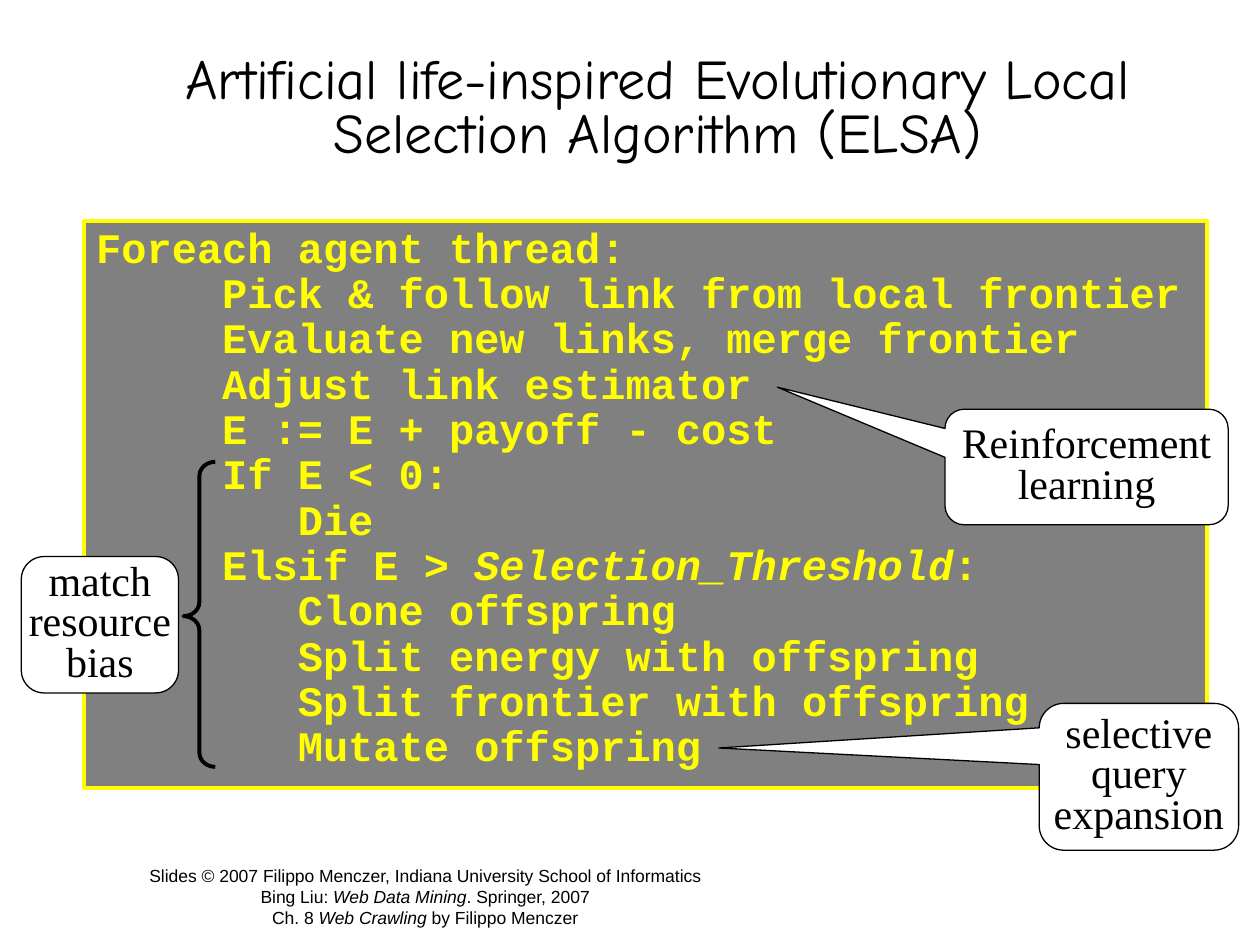
from pptx import Presentation
from pptx import util as u
from pptx.dml.color import RGBColor
from pptx.enum import shapes, text

THEME = {
    "ink": "000000", "paper": "FFFFFF", "panel": "808080", "code": "FFFF00",
    "title": ("Comic Neue", 32), "mono": ("Courier New", 24),
    "note": ("Times New Roman", 24), "foot": ("Arial", 10),
    "thin": 0.75, "thick": 2.25,
}
TITLE = "Artificial life-inspired Evolutionary Local Selection Algorithm (ELSA)"
FOOT = [
    "Slides © 2007 Filippo Menczer, Indiana University School of Informatics",
    "Bing Liu: |Web Data Mining|. Springer, 2007",
    "Ch. 8 |Web Crawling| by Filippo Menczer",
]
HEAD = "Foreach agent thread:"
STEPS = [
    "Pick & follow link from local frontier",
    "Evaluate new links, merge frontier",
    "Adjust link estimator",
    "E := E + payoff - cost",
    "If E < 0:",
    "   Die",
    "Elsif E > |Selection_Threshold|:",
    "   Clone offspring",
    "   Split energy with offspring",
    "   Split frontier with offspring",
    "   Mutate offspring",
]
KIND = shapes.MSO_SHAPE
CALL = KIND.ROUNDED_RECTANGULAR_CALLOUT
NOTES = [
    (CALL, (20.95, 14.18, 4.02, 2.96), (-2.107, -0.196, 0.167),
     ["selective", "query", "expansion"]),
    (KIND.ROUNDED_RECTANGLE, (0.43, 11.22, 3.17, 2.75), (0.167,),
     ["match", "resource", "bias"]),
    (CALL, (19.05, 8.25, 5.71, 2.33), (-1.092, -0.691, 0.167),
     ["Reinforcement", "learning"]),
]


def tint(name):
    return RGBColor.from_string(THEME[name])


def span(box):
    return [u.Cm(n) for n in box]


def write(frame, lines, face, color="ink", gap=1.0, align=text.PP_ALIGN.CENTER,
          anchor=text.MSO_ANCHOR.MIDDLE, wrap=True, bold=False):
    frame.word_wrap = wrap
    frame.auto_size = text.MSO_AUTO_SIZE.NONE
    frame.vertical_anchor = anchor
    name, size = THEME[face]
    for row, line in enumerate(lines):
        para = frame.add_paragraph() if row else frame.paragraphs[0]
        para.alignment, para.line_spacing = align, gap
        for part, words in enumerate(line.split("|")):
            run = para.add_run()
            run.text = words
            font = run.font
            font.name, font.size = name, u.Pt(size)
            font.bold, font.italic = bold, part % 2 == 1
            font.color.rgb = tint(color)


def draw(slide, kind, box, line, width, fill=None, bends=()):
    shape = slide.shapes.add_shape(kind, *span(box))
    shape.shadow.inherit = False
    if fill:
        shape.fill.solid()
        shape.fill.fore_color.rgb = tint(fill)
    else:
        shape.fill.background()
    shape.line.color.rgb = tint(line)
    shape.line.width = u.Pt(THEME[width])
    for spot, bend in enumerate(bends):
        shape.adjustments[spot] = bend
    return shape


def main():
    deck = Presentation()
    deck.slide_width, deck.slide_height = u.Cm(25.4), u.Cm(19.05)
    slide = deck.slides.add_slide(deck.slide_layouts[5])
    slide.background.fill.solid()
    slide.background.fill.fore_color.rgb = tint("paper")

    foot = slide.shapes.add_textbox(*span((1.9, 17.32, 13.34, 1.52)))
    write(foot.text_frame, FOOT, "foot", anchor=text.MSO_ANCHOR.TOP)

    panel = draw(slide, KIND.RECTANGLE, (1.69, 4.45, 22.65, 11.43),
                 "code", "thick", "panel")
    write(panel.text_frame, [HEAD] + STEPS, "mono", "code", 0.9,
          text.PP_ALIGN.LEFT, text.MSO_ANCHOR.TOP, bold=True)
    for para in panel.text_frame.paragraphs[1:]:
        para._p.get_or_add_pPr().set("marL", str(u.Cm(2.54)))

    title = slide.shapes.title
    title.left, title.top, title.width, title.height = span(
        (2.33, 0.43, 21.87, 3.6))
    write(title.text_frame, [TITLE], "title", gap=0.8)

    draw(slide, KIND.LEFT_BRACE, (3.7, 9.31, 0.64, 6.15), "ink", "thick",
         bends=(0.444, 0.506))
    for kind, box, bends, lines in NOTES:
        note = draw(slide, kind, box, "ink", "thin", "paper", bends)
        write(note.text_frame, lines, "note", gap=0.8, wrap=False)

    deck.save("out.pptx")


if __name__ == "__main__":
    main()
